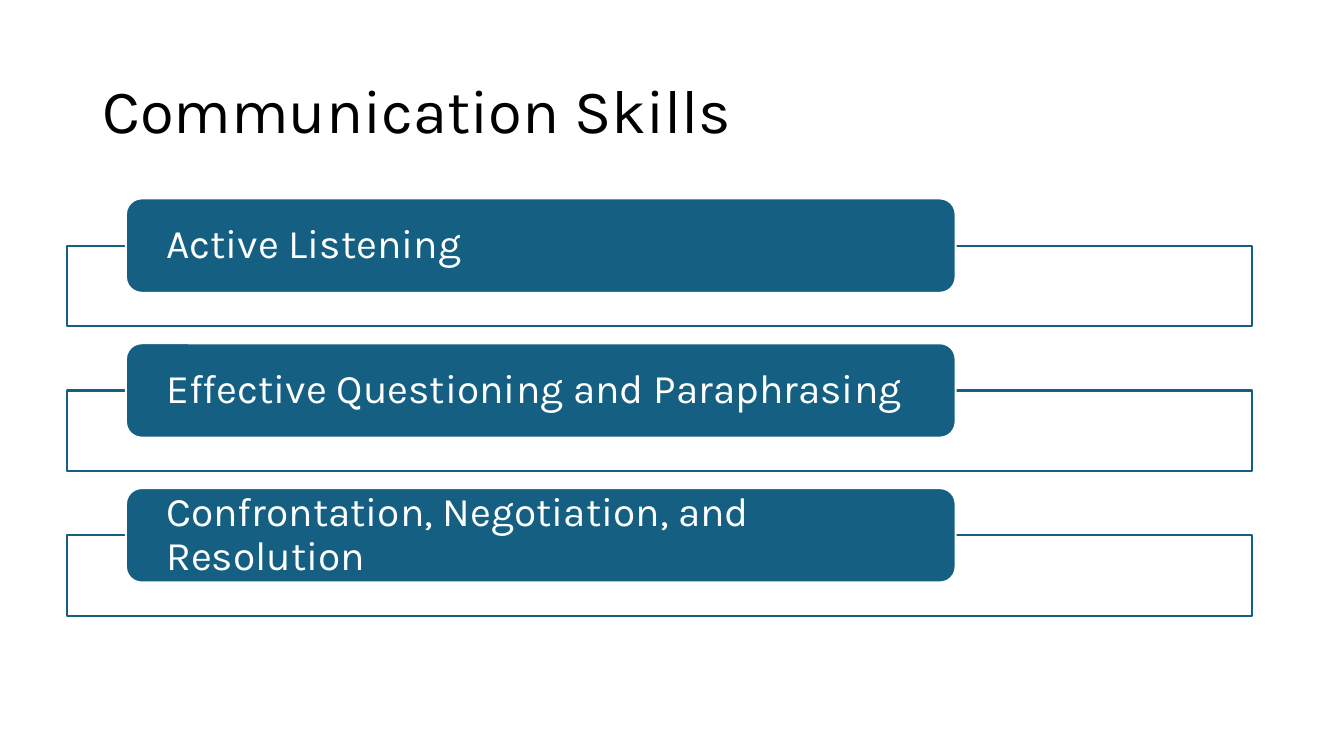
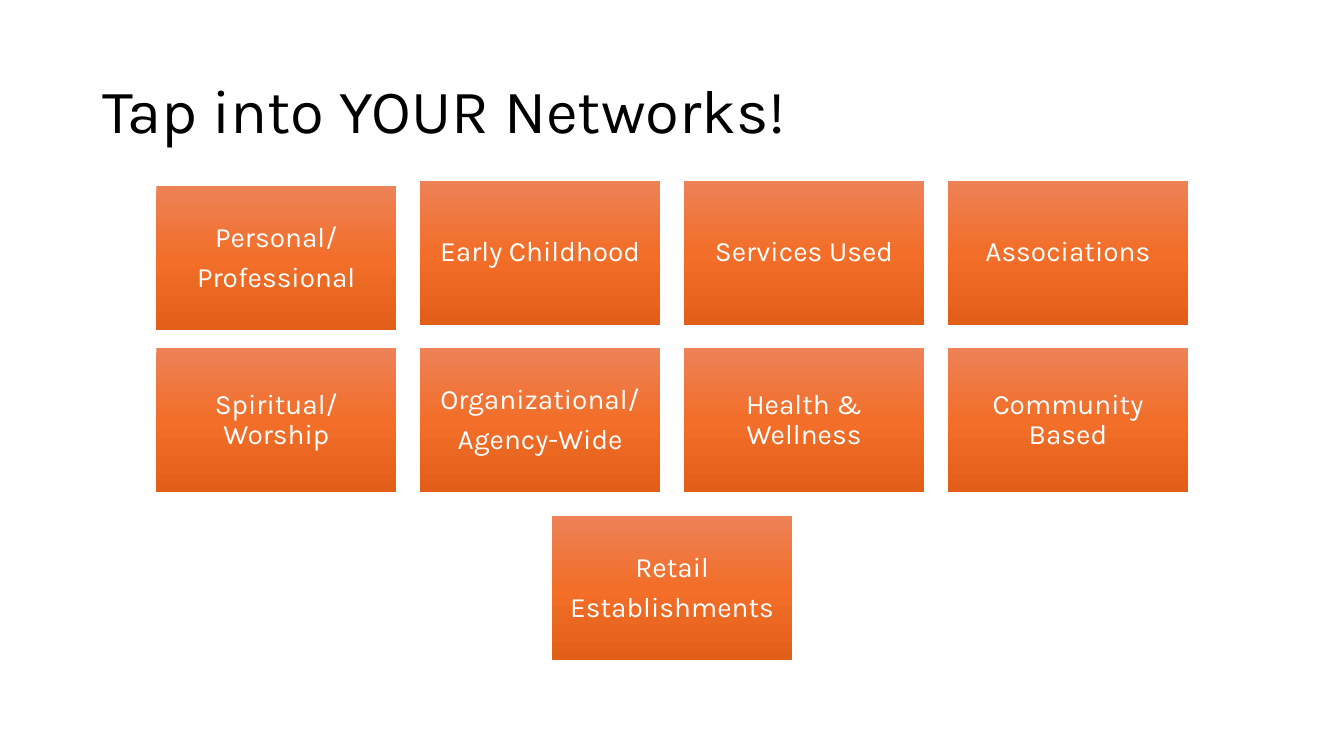
from dataclasses import dataclass

from lxml import etree
from pptx import Presentation
from pptx.dml.color import RGBColor
from pptx.enum.shapes import MSO_SHAPE
from pptx.enum.text import MSO_ANCHOR, MSO_AUTO_SIZE, PP_ALIGN
from pptx.oxml.ns import qn
from pptx.util import Cm, Pt

RECTANGLE = MSO_SHAPE.RECTANGLE
ROUNDED_RECTANGLE = MSO_SHAPE.ROUNDED_RECTANGLE
MIDDLE = MSO_ANCHOR.MIDDLE
NO_AUTOFIT = MSO_AUTO_SIZE.NONE
LEFT = PP_ALIGN.LEFT
CENTER = PP_ALIGN.CENTER
TITLE_ONLY_LAYOUT = 5


@dataclass(frozen=True)
class Theme:
    font: str = "Karla"
    black: str = "000000"
    white: str = "FFFFFF"
    blue: str = "156082"
    tile_gradient: tuple = ((0, "ED8257"), (50, "F26E29"), (100, "E25F1A"))
    title_size: int = 44
    skill_size: int = 29
    tile_size: int = 20
    outline: float = 1.5
    line_spacing: float = 0.9
    space_after: float = 0.35


@dataclass(frozen=True)
class Box:
    left: float
    top: float
    width: float
    height: float

    def lengths(self):
        return Cm(self.left), Cm(self.top), Cm(self.width), Cm(self.height)


THEME = Theme()
SLIDE_SIZE = (33.87, 19.05)
TITLE_BOX = Box(2.33, 1.01, 29.21, 3.68)
SKILLS_BOX = Box(1.68, 5, 29.87, 10.52)
NETWORKS_BOX = Box(3.94, 4.55, 26, 12.09)

SKILLS = (
    "Active Listening",
    "Effective Questioning and Paraphrasing",
    "Confrontation, Negotiation, and Resolution",
)
NETWORK_ROWS = (
    ("Personal/\nProfessional", "Early Childhood", "Services Used", "Associations"),
    ("Spiritual/Worship", "Organizational/\nAgency-Wide", "Health & Wellness", "Community Based"),
    ("Retail\nEstablishments",),
)


def write_text(shape, text, size, color, alignment, side_margin, end_margin):
    frame = shape.text_frame
    frame.text = text
    frame.word_wrap = True
    frame.auto_size = NO_AUTOFIT
    frame.vertical_anchor = MIDDLE
    frame.margin_left = frame.margin_right = Cm(side_margin)
    frame.margin_top = frame.margin_bottom = Cm(end_margin)
    for paragraph in frame.paragraphs:
        paragraph.alignment = alignment
        paragraph.line_spacing = THEME.line_spacing
        paragraph.space_before = Pt(0)
        paragraph.space_after = Pt(round(size * THEME.space_after))
        for run in paragraph.runs:
            run.font.name = THEME.font
            run.font.size = Pt(size)
            run.font.color.rgb = RGBColor.from_string(color)


def add_box(slide, preset, box):
    shape = slide.shapes.add_shape(preset, *box.lengths())
    shape.shadow.inherit = False
    return shape


def paint_solid(shape, fill_color, line_color):
    shape.fill.solid()
    shape.fill.fore_color.rgb = RGBColor.from_string(fill_color)
    shape.line.color.rgb = RGBColor.from_string(line_color)
    shape.line.width = Pt(THEME.outline)


def paint_gradient(shape, stops):
    shape.fill.gradient()
    shape.fill.gradient_angle = 270
    shape.line.fill.background()
    stop_list = shape.element.find(".//" + qn("a:gsLst"))
    for old_stop in list(stop_list):
        stop_list.remove(old_stop)
    for percent, color in stops:
        stop = etree.SubElement(stop_list, qn("a:gs"), pos=str(percent * 1000))
        etree.SubElement(stop, qn("a:srgbClr"), val=color)


def add_titled_slide(presentation, text):
    slide = presentation.slides.add_slide(presentation.slide_layouts[TITLE_ONLY_LAYOUT])
    title = slide.shapes.title
    title.left, title.top, title.width, title.height = TITLE_BOX.lengths()
    write_text(title, text, THEME.title_size, THEME.black, LEFT, 0.25, 0.13)
    return slide


def add_skill_list(slide, box, skills):
    pitch, label_height, panel_height = 3.65, 2.38, 2.03
    for index, skill in enumerate(skills):
        top = box.top + index * pitch
        panel_top = top + label_height / 2
        panel = add_box(slide, RECTANGLE, Box(box.left, panel_top, box.width, panel_height))
        paint_solid(panel, THEME.white, THEME.blue)
        label_box = Box(box.left + box.width * 0.05, top, box.width * 0.7, label_height)
        label = add_box(slide, ROUNDED_RECTANGLE, label_box)
        paint_solid(label, THEME.blue, THEME.white)
        write_text(label, skill, THEME.skill_size, THEME.white, LEFT, 0.9, 0)


def add_network_grid(slide, box, rows):
    gap, first_tile_drop = 0.6, 0.15
    columns = max(len(row) for row in rows)
    width = (box.width - gap * (columns - 1)) / columns
    height = (box.height - gap * (len(rows) - 1)) / len(rows)
    for row_index, row in enumerate(rows):
        indent = (columns - len(row)) * (width + gap) / 2
        for column_index, network in enumerate(row):
            left = box.left + indent + column_index * (width + gap)
            top = box.top + row_index * (height + gap)
            if row_index == column_index == 0:
                top += first_tile_drop
            tile = add_box(slide, RECTANGLE, Box(left, top, width, height))
            paint_gradient(tile, THEME.tile_gradient)
            write_text(tile, network, THEME.tile_size, THEME.white, CENTER, 0.2, 0.2)


def main():
    presentation = Presentation()
    presentation.slide_width, presentation.slide_height = map(Cm, SLIDE_SIZE)
    skills_slide = add_titled_slide(presentation, "Communication Skills")
    add_skill_list(skills_slide, SKILLS_BOX, SKILLS)
    networks_slide = add_titled_slide(presentation, "Tap into YOUR Networks!")
    add_network_grid(networks_slide, NETWORKS_BOX, NETWORK_ROWS)
    presentation.save("out.pptx")


if __name__ == "__main__":
    main()
